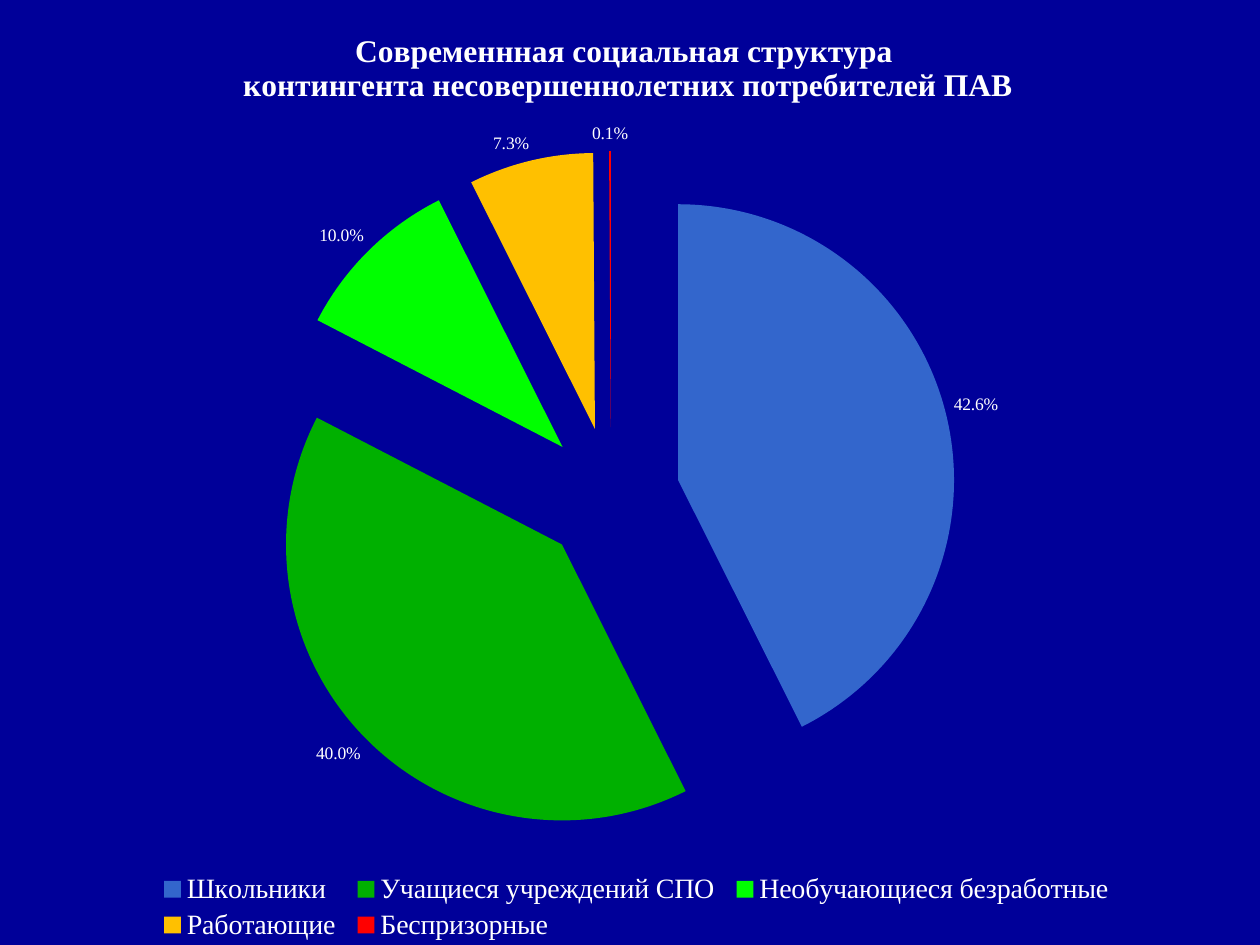
"""Builds a slide with an exploded pie chart of a social structure."""
from pptx import Presentation
from pptx import util as u
from pptx.chart.data import CategoryChartData
from pptx.dml.color import RGBColor
from pptx.enum import chart as kinds
from pptx.oxml import parse_xml
from pptx.oxml.ns import nsdecls

TITLE = "Современнная социальная структура \nконтингента несовершеннолетних потребителей ПАВ"
GROUPS = [
    ("Школьники", 0.426, "blue"),
    ("Учащиеся учреждений СПО", 0.4, "green"),
    ("Необучающиеся безработные", 0.1, "lime"),
    ("Работающие", 0.073, "amber"),
    ("Беспризорные", 0.001, "red"),
]
COLOURS = {
    "background": "000099",
    "text": "FFFFFF",
    "blue": "3366CC",
    "green": "00B000",
    "lime": "00FF00",
    "amber": "FFC000",
    "red": "FF0000",
}
FONT = "Times New Roman"
EXPLOSION = 25
WIDTH, HEIGHT = u.Cm(25.4), u.Cm(19.05)


def colour(name):
    return RGBColor.from_string(COLOURS[name])


def fill_solid(fill, name):
    fill.solid()
    fill.fore_color.rgb = colour(name)


def style_font(font, size, bold=False):
    font.name, font.size, font.bold = FONT, u.Pt(size), bold
    font.color.rgb = colour("text")


def place(element, index, inner=False, **fractions):
    for layout in element.xpath("c:layout"):
        element.remove(layout)
    target = '<c:layoutTarget val="inner"/>' if inner else ""
    modes = "".join(f'<c:{key}Mode val="edge"/>' for key in "xy")
    sizes = "".join(f'<c:{key} val="{value}"/>' for key, value in fractions.items())
    element.insert(index, parse_xml(
        f'<c:layout {nsdecls("c")}><c:manualLayout>{target}{modes}{sizes}'
        "</c:manualLayout></c:layout>"))


def add_pie(slide):
    data = CategoryChartData(number_format="0.0%")
    data.categories = [name for name, _, _ in GROUPS]
    data.add_series("Series 1", [share for _, share, _ in GROUPS])
    chart = slide.shapes.add_chart(
        kinds.XL_CHART_TYPE.PIE, 0, 0, WIDTH, HEIGHT, data).chart
    style_font(chart.font, 10)
    return chart


def style_title(chart):
    frame = chart.chart_title.text_frame
    frame.text = TITLE
    for paragraph in frame.paragraphs:
        for run in paragraph.runs:
            style_font(run.font, 18, bold=True)
    place(chart.element.chart.xpath("c:title")[0], 1, x=0.19, y=0.03)


def style_legend(chart):
    chart.has_legend = True
    legend = chart.legend
    legend.position = kinds.XL_LEGEND_POSITION.BOTTOM
    legend.include_in_layout = False
    style_font(legend.font, 16)
    place(chart.element.chart.xpath("c:legend")[0], 1, x=0.12, y=0.92, w=0.77, h=0.08)


def style_slices(chart):
    plot = chart.plots[0]
    plot.vary_by_categories = True
    for index, (_, _, name) in enumerate(GROUPS):
        point = plot.series[0].points[index]
        fill_solid(point.format.fill, name)
        point.format.line.fill.background()
    plot_area = chart.element.chart.plotArea
    plot_area.xpath("c:pieChart/c:ser/c:dPt")[0].addprevious(
        parse_xml(f'<c:explosion {nsdecls("c")} val="{EXPLOSION}"/>'))
    place(plot_area, 0, inner=True, x=0.21, y=0.16, w=0.55, h=0.73)

    labels = plot.series[0].data_labels
    labels.show_value = True
    labels.number_format, labels.number_format_is_linked = "0.0%", False
    labels.position = kinds.XL_LABEL_POSITION.OUTSIDE_END
    style_font(labels.font, 10)


def main():
    presentation = Presentation()
    presentation.slide_width, presentation.slide_height = WIDTH, HEIGHT
    slide = presentation.slides.add_slide(presentation.slide_layouts[6])
    fill_solid(slide.background.fill, "background")
    chart = add_pie(slide)
    style_title(chart)
    style_legend(chart)
    style_slices(chart)
    presentation.save("out.pptx")


if __name__ == "__main__":
    main()
